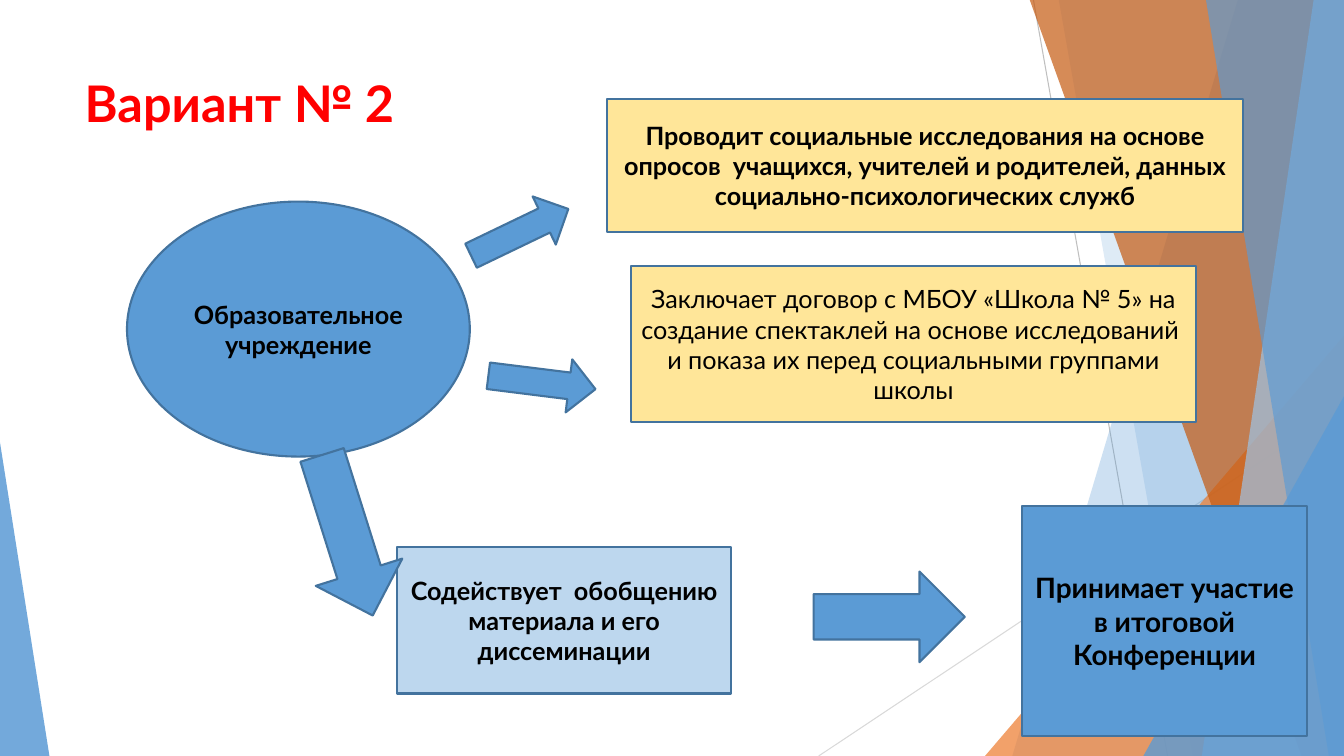
import dataclasses

import pptx
import pptx.dml.color
import pptx.enum.shapes
import pptx.enum.text
import pptx.oxml.ns
import pptx.util
from lxml import etree

Inches = pptx.util.Inches
Pt = pptx.util.Pt
qn = pptx.oxml.ns.qn
MSO_SHAPE = pptx.enum.shapes.MSO_SHAPE
PP_ALIGN = pptx.enum.text.PP_ALIGN
MSO_ANCHOR = pptx.enum.text.MSO_ANCHOR
rgb = pptx.dml.color.RGBColor.from_string


@dataclasses.dataclass(frozen=True)
class Theme:
    font: str = "Lato"
    blue: str = "5B9BD5"
    outline: str = "43739E"
    pale_blue: str = "BDD7EE"
    sky: str = "9DC3E6"
    yellow: str = "FFE699"
    orange: str = "ED7D31"
    rust: str = "C55A11"
    grey: str = "BFBFBF"
    light_grey: str = "D9D9D9"
    red: str = "FF0000"
    black: str = "000000"
    title_size: int = 36
    large_size: int = 20
    body_size: int = 18


theme = Theme()


def paint(shape, color, opacity=None):
    """Fill a shape; an opacity in percent marks borderless decoration."""
    shape.shadow.inherit = False
    shape.fill.solid()
    shape.fill.fore_color.rgb = rgb(color)
    if opacity is None:
        shape.line.color.rgb = rgb(theme.outline)
        shape.line.width = Pt(1.5)
    else:
        shape.line.fill.background()
        color_element = shape._element.spPr.find(qn("a:solidFill")).find(qn("a:srgbClr"))
        etree.SubElement(color_element, qn("a:alpha"), val=str(opacity * 1000))


def write(shape, lines, size, color, bold, alignment, anchor):
    frame = shape.text_frame
    frame.word_wrap = True
    frame.vertical_anchor = anchor
    frame.text = "\n".join(lines)
    for paragraph in frame.paragraphs:
        paragraph.alignment = alignment
        for run in paragraph.runs:
            run.font.name = theme.font
            run.font.size = Pt(size)
            run.font.bold = bold
            run.font.color.rgb = rgb(color)


presentation = pptx.Presentation()
presentation.slide_width = Inches(13.33)
presentation.slide_height = Inches(7.5)
slide = presentation.slides.add_slide(presentation.slide_layouts[5])
shapes = slide.shapes

# Background: thin lines, then translucent facets from back to front
for x1, y1, x2, y2, color in [
    (10.25, 0, 11.58, 7.5, theme.grey),
    (13.33, 4.03, 8.12, 7.5, theme.light_grey),
]:
    line = shapes.add_connector(
        pptx.enum.shapes.MSO_CONNECTOR.STRAIGHT, Inches(x1), Inches(y1), Inches(x2), Inches(y2)
    )
    line.line.color.rgb = rgb(color)
    line.line.width = Pt(0.75)
    etree.SubElement(line._element.spPr, qn("a:effectLst"))

# A band runs from its slanted left edge to the right side of the slide:
# ("band", top x, bottom x, color, opacity)
# ("triangle", left, top, width, apex, color, opacity), standing on the bottom
for kind, *facet in [
    ("band", 12.28, 10.04, theme.blue, 30),
    ("band", 10.5, 11.83, theme.blue, 20),
    ("triangle", 9.77, 3.33, 3.56, 1, theme.orange, 72),
    ("band", 10.21, 12.91, theme.rust, 70),
    ("band", 13.03, 11.92, theme.sky, 70),
    ("band", 11.96, 13.18, theme.blue, 65),
    ("triangle", 11.34, 3.93, 1.99, 1, theme.blue, 80),
    ("triangle", 0, 4.39, 0.49, 0, theme.blue, 85),
]:
    *geometry, color, opacity = facet
    if kind == "band":
        top_x, bottom_x = geometry
        builder = shapes.build_freeform(Inches(top_x), Inches(-0.01))
        corners = [(13.33, -0.01), (13.33, 7.5), (bottom_x, 7.5)]
        builder.add_line_segments([(Inches(x), Inches(y)) for x, y in corners], close=True)
        shape = builder.convert_to_shape()
    else:
        left, top, width, apex = geometry
        shape = shapes.add_shape(
            MSO_SHAPE.ISOSCELES_TRIANGLE, Inches(left), Inches(top), Inches(width), Inches(7.5 - top)
        )
        shape.adjustments[0] = apex
    paint(shape, color, opacity)

# Title, brought in front of the background
title = shapes.title
title.left, title.top = Inches(0.74), Inches(0.67)
title.width, title.height = Inches(9.4), Inches(1.44)
write(title, ["Вариант № 2"], theme.title_size, theme.red, True, PP_ALIGN.LEFT, MSO_ANCHOR.TOP)
shapes._spTree.append(title._element)

# Scheme: kind, left, top, width, height, rotation, fill, size, bold, lines
ellipse, box, arrow = MSO_SHAPE.OVAL, MSO_SHAPE.RECTANGLE, MSO_SHAPE.RIGHT_ARROW
body, large = theme.body_size, theme.large_size
for kind, left, top, width, height, rotation, color, size, bold, lines in [
    (ellipse, 1.26, 2, 3.4, 2.53, 0, theme.blue, body, True, ["Образовательное учреждение"]),
    (box, 6.02, 0.98, 6.31, 1.32, 0, theme.yellow, body, True, [
        "Проводит социальные исследования на основе опросов  учащихся, учителей и родителей, "
        "данных социально-психологических служб"]),
    (box, 6.26, 2.64, 5.6, 1.55, 0, theme.yellow, body, False, [
        "Заключает договор с МБОУ «Школа № 5» на",
        "создание спектаклей на основе исследований  и показа их перед социальными группами школы"]),
    (arrow, 4.62, 2.04, 1.07, 0.53, 334.3, theme.blue, body, False, []),
    (arrow, 4.84, 3.53, 1.07, 0.53, 7.1, theme.blue, body, False, []),
    (box, 3.94, 5.43, 3.31, 1.45, 0, theme.pale_blue, body, True, [
        "Содействует  обобщению", "материала и его диссеминации"]),
    (arrow, 8.07, 5.67, 1.5, 0.9, 0, theme.blue, body, False, []),
    (box, 10.14, 5.02, 2.82, 2.28, 0, theme.blue, large, True, [
        "Принимает участие в итоговой Конференции"]),
    (arrow, 2.61, 4.86, 1.67, 0.9, 72.5, theme.blue, body, False, []),
]:
    shape = shapes.add_shape(kind, Inches(left), Inches(top), Inches(width), Inches(height))
    shape.rotation = rotation
    paint(shape, color)
    if lines:
        write(shape, lines, size, theme.black, bold, PP_ALIGN.CENTER, MSO_ANCHOR.MIDDLE)

presentation.save("out.pptx")
